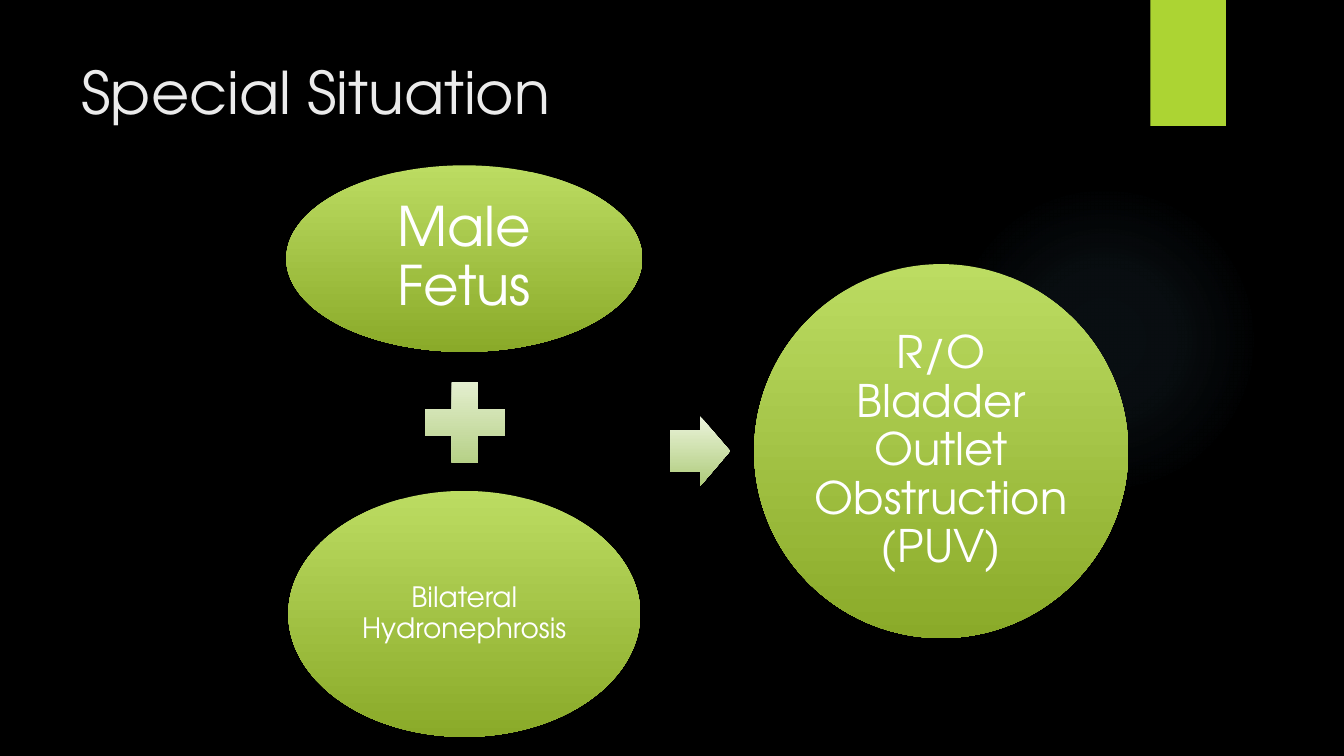
import pptx
import pptx.dml.color
import pptx.enum.shapes
import pptx.enum.text
import pptx.oxml
import pptx.oxml.ns
import pptx.util

Inches = pptx.util.Inches
Shapes = pptx.enum.shapes.MSO_SHAPE
Anchor = pptx.enum.text.MSO_ANCHOR
Align = pptx.enum.text.PP_ALIGN


def color(value):
    return pptx.dml.color.RGBColor.from_string(value)


def write_text(shape, text, size, ink="FFFFFF", font="TeX Gyre Adventor",
               align=Align.CENTER, anchor=Anchor.MIDDLE, spacing=0.9,
               margins=(0.04, 0.04)):
    frame = shape.text_frame
    frame.word_wrap = True
    frame.auto_size = pptx.enum.text.MSO_AUTO_SIZE.NONE
    frame.vertical_anchor = anchor
    frame.margin_left = frame.margin_right = Inches(margins[0])
    frame.margin_top = frame.margin_bottom = Inches(margins[1])
    paragraph = frame.paragraphs[0]
    paragraph.alignment = align
    paragraph.line_spacing = spacing
    run = paragraph.add_run()
    run.text = text
    run.font.size = pptx.util.Pt(size)
    run.font.name = font
    run.font.bold = False
    run.font.color.rgb = color(ink)


class SlideBuilder:
    green = ("BCDC62", "8AAA29")
    pale = ("ECF4DC", "AECB7A")
    accent = "ACD433"
    glow_color = "7AC4F0"

    def __init__(self, presentation):
        self.slide = presentation.slides.add_slide(presentation.slide_layouts[5])
        background = self.slide.background.fill
        background.solid()
        background.fore_color.rgb = color("000000")

    def title(self, text, left, top, width, height):
        shape = self.slide.shapes.title
        shape.left, shape.top = Inches(left), Inches(top)
        shape.width, shape.height = Inches(width), Inches(height)
        write_text(shape, text, 42, ink="EBEBEB", align=Align.LEFT,
                   anchor=Anchor.TOP, spacing=1.0, margins=(0.1, 0.05))

    def shape(self, kind, left, top, width, height):
        shape = self.slide.shapes.add_shape(
            kind, Inches(left), Inches(top), Inches(width), Inches(height))
        shape.shadow.inherit = False
        shape.line.fill.background()
        return shape

    def ribbon(self, *box):
        shape = self.shape(Shapes.RECTANGLE, *box)
        shape.fill.solid()
        shape.fill.fore_color.rgb = color(self.accent)

    def glow(self, *box):
        shape = self.shape(Shapes.OVAL, *box)
        shape.fill.gradient()
        stops = "".join(
            f'<a:gs pos="{position * 1000}"><a:srgbClr val="{self.glow_color}">'
            f'<a:alpha val="{opacity * 1000}"/></a:srgbClr></a:gs>'
            for position, opacity in ((0, 7), (36, 6), (69, 0), (100, 0)))
        radial = pptx.oxml.parse_xml(
            f'<a:gradFill {pptx.oxml.ns.nsdecls("a")} rotWithShape="1">'
            f'<a:gsLst>{stops}</a:gsLst><a:path path="circle">'
            '<a:fillToRect l="50000" t="50000" r="50000" b="50000"/>'
            '</a:path></a:gradFill>')
        properties = shape._element.spPr
        properties.replace(properties.find(pptx.oxml.ns.qn("a:gradFill")), radial)

    def gradient_shape(self, kind, box, colors):
        shape = self.shape(kind, *box)
        shape.fill.gradient()
        shape.fill.gradient_angle = 270
        for stop, position, value in zip(shape.fill.gradient_stops, (0, 1), colors):
            stop.position = position
            stop.color.rgb = color(value)
        return shape

    def bubble(self, text, size, *box):
        write_text(self.gradient_shape(Shapes.OVAL, box, self.green), text, size)

    def plus(self, *box):
        self.gradient_shape(Shapes.MATH_PLUS, box, self.pale)

    def arrow(self, *box):
        shape = self.gradient_shape(Shapes.RIGHT_ARROW, box, self.pale)
        shape.adjustments[0] = 0.6
        shape.adjustments[1] = 0.5


def main():
    presentation = pptx.Presentation()
    presentation.slide_width = Inches(13.33)
    presentation.slide_height = Inches(7.5)

    builder = SlideBuilder(presentation)
    builder.glow(9.41, 1.83, 3.08, 3.08)
    builder.ribbon(11.41, 0, 0.75, 1.25)
    builder.title("Special Situation", 0.71, 0.5, 10.29, 1.53)
    builder.bubble("Male Fetus", 39, 2.84, 1.64, 3.53, 1.85)
    builder.plus(4.07, 3.65, 1.08, 1.08)
    builder.bubble("Bilateral Hydronephrosis", 20, 2.86, 4.87, 3.49, 2.44)
    builder.arrow(6.65, 4.13, 0.59, 0.69)
    builder.bubble("R/O Bladder Outlet Obstruction (PUV)", 32, 7.48, 2.62, 3.71, 3.71)

    presentation.save("out.pptx")


if __name__ == "__main__":
    main()
